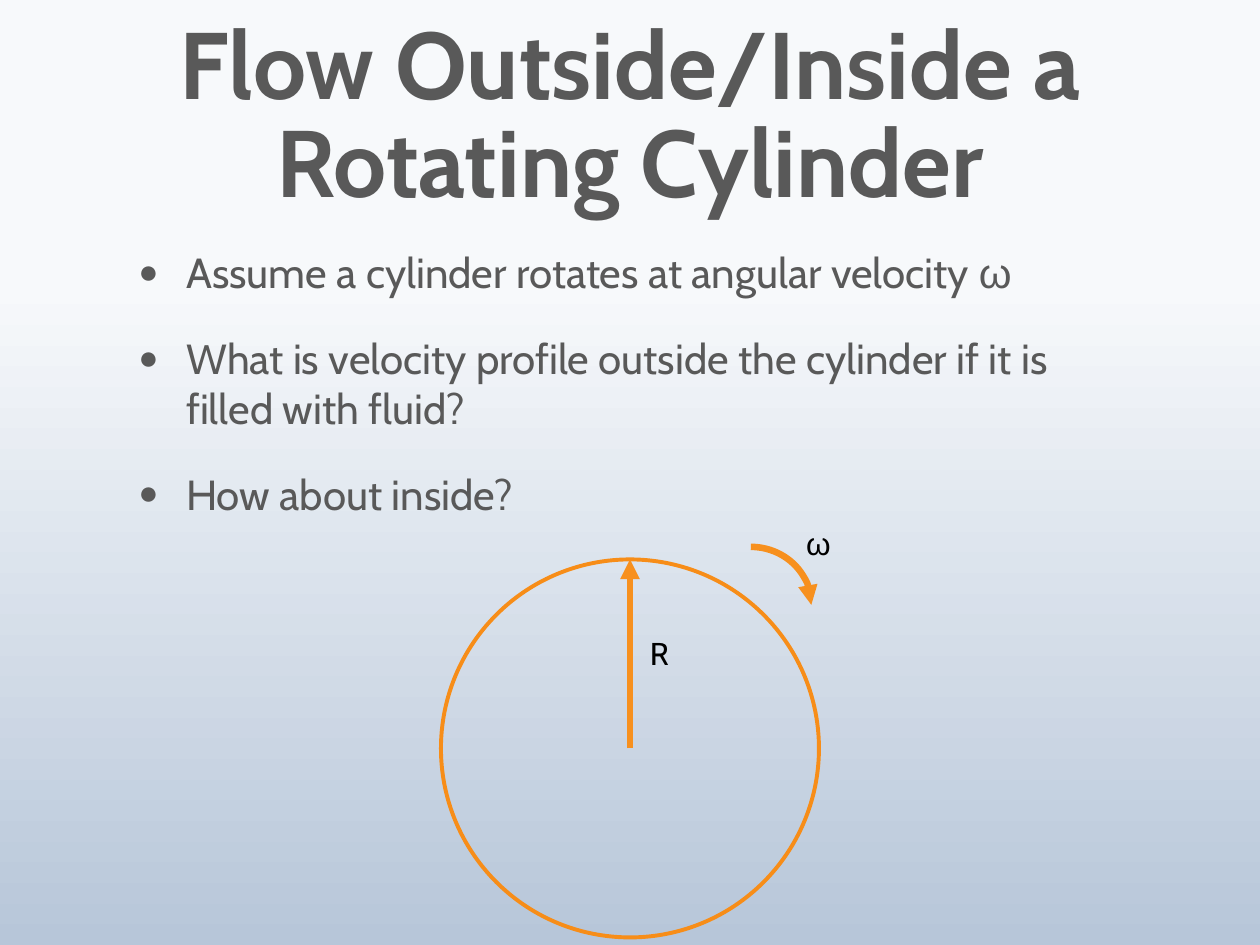
from dataclasses import dataclass

import lxml.etree
import pptx
import pptx.dml.color
import pptx.enum.shapes
import pptx.enum.text
import pptx.oxml.ns
import pptx.util
from pptx.util import Inches

GRAY = "595959"
ORANGE = "F7901E"
RIM_ORANGE = "F78D18"
BLACK = "000000"


@dataclass(frozen=True)
class Run:
    text: str
    font: str = "Cabin"


@dataclass(frozen=True)
class Label:
    text: str
    font: str
    left: float
    top: float
    width: float


@dataclass(frozen=True)
class Outline:
    kind: pptx.enum.shapes.MSO_SHAPE
    left: float
    top: float
    width: float
    height: float
    color: str
    weight: float
    arrow: bool = False


BULLETS = [
    [Run("Assume a cylinder rotates at angular velocity "), Run("ω", "Arial")],
    [Run("What is velocity profile outside the cylinder if it is filled with fluid?")],
    [Run("How about inside?")],
]
LABELS = [
    Label("R", "Cabin", 5.06, 4.98, 0.35),
    Label("ω", "Arial", 6.3, 4.11, 0.38),
]
CYLINDER = Outline(pptx.enum.shapes.MSO_SHAPE.OVAL, 3.5, 4.44, 3, 3, RIM_ORANGE, 2.25)
ROTATION = Outline(pptx.enum.shapes.MSO_SHAPE.ARC, 5.48, 4.34, 0.96, 0.92, ORANGE, 3.75, True)


def rgb(color: str) -> pptx.dml.color.RGBColor:
    return pptx.dml.color.RGBColor.from_string(color)


def add_element(parent, tag: str, **attributes: str):
    return lxml.etree.SubElement(parent, pptx.oxml.ns.qn(tag), attributes)


def write_text(paragraph, text: str, *, size: float, font: str = "Cabin",
               color: str = GRAY, bold: bool = False) -> None:
    run = paragraph.add_run()
    run.text = text
    run.font.name = font
    run.font.size = pptx.util.Pt(size)
    run.font.bold = bold
    run.font.color.rgb = rgb(color)


def format_line(line, color: str, weight: float, arrow: bool) -> None:
    line.color.rgb = rgb(color)
    line.width = pptx.util.Pt(weight)
    if arrow:
        properties = line._get_or_add_ln()
        add_element(properties, "a:tailEnd", type="triangle")


def paint_background(slide) -> None:
    fill = slide.background.fill
    fill.gradient()
    fill.gradient_angle = 270
    for stop, (position, color) in zip(fill.gradient_stops, [(0.3, "F7F9FB"), (1, "B7C6D9")]):
        stop.position = position
        stop.color.rgb = rgb(color)


def format_title(title) -> None:
    title.left, title.top = Inches(1), Inches(0.25)
    title.width, title.height = Inches(8), Inches(1.38)
    frame = title.text_frame
    frame.word_wrap = True
    frame.auto_size = pptx.enum.text.MSO_AUTO_SIZE.NONE
    frame.vertical_anchor = pptx.enum.text.MSO_ANCHOR.MIDDLE
    paragraph = frame.paragraphs[0]
    paragraph.alignment = pptx.enum.text.PP_ALIGN.CENTER
    paragraph.line_spacing = pptx.util.Pt(56)
    write_text(paragraph, "Flow Outside/Inside a Rotating Cylinder", size=54, bold=True)


def add_bullets(slide, bullets: list[list[Run]]) -> None:
    box = slide.shapes.add_textbox(Inches(1), Inches(1.91), Inches(8), Inches(4.71))
    frame = box.text_frame
    frame.word_wrap = True
    for index, runs in enumerate(bullets):
        paragraph = frame.add_paragraph() if index else frame.paragraphs[0]
        paragraph.space_before = pptx.util.Pt(20)
        properties = paragraph._p.get_or_add_pPr()
        indent = Inches(0.38)
        properties.set("marL", str(indent))
        properties.set("indent", str(-indent))
        add_element(properties, "a:buSzPct", val="80000")
        add_element(properties, "a:buFont", typeface="Arial")
        add_element(properties, "a:buChar", char="●")
        for run in runs:
            write_text(paragraph, run.text, size=24, font=run.font)


def add_outline(slide, outline: Outline) -> None:
    shape = slide.shapes.add_shape(
        outline.kind, Inches(outline.left), Inches(outline.top),
        Inches(outline.width), Inches(outline.height))
    shape.shadow.inherit = False
    shape.fill.background()
    format_line(shape.line, outline.color, outline.weight, outline.arrow)


def add_radius(slide, cylinder: Outline) -> None:
    center_x = Inches(cylinder.left + cylinder.width / 2)
    center_y = Inches(cylinder.top + cylinder.height / 2)
    connector = slide.shapes.add_connector(
        pptx.enum.shapes.MSO_CONNECTOR.STRAIGHT,
        center_x, center_y, center_x, Inches(cylinder.top))
    format_line(connector.line, ORANGE, 3.75, True)
    add_element(connector._element.spPr, "a:effectLst")


def add_label(slide, label: Label) -> None:
    box = slide.shapes.add_textbox(
        Inches(label.left), Inches(label.top), Inches(label.width), Inches(0.4))
    frame = box.text_frame
    frame.word_wrap = False
    frame.auto_size = pptx.enum.text.MSO_AUTO_SIZE.SHAPE_TO_FIT_TEXT
    write_text(frame.paragraphs[0], label.text, size=18, font=label.font, color=BLACK)


def main() -> None:
    presentation = pptx.Presentation()
    presentation.slide_width, presentation.slide_height = Inches(10), Inches(7.5)
    slide = presentation.slides.add_slide(presentation.slide_layouts.get_by_name("Title Only"))
    paint_background(slide)
    format_title(slide.shapes.title)
    add_bullets(slide, BULLETS)
    add_outline(slide, CYLINDER)
    add_radius(slide, CYLINDER)
    add_outline(slide, ROTATION)
    for label in LABELS:
        add_label(slide, label)
    presentation.save("out.pptx")


if __name__ == "__main__":
    main()
